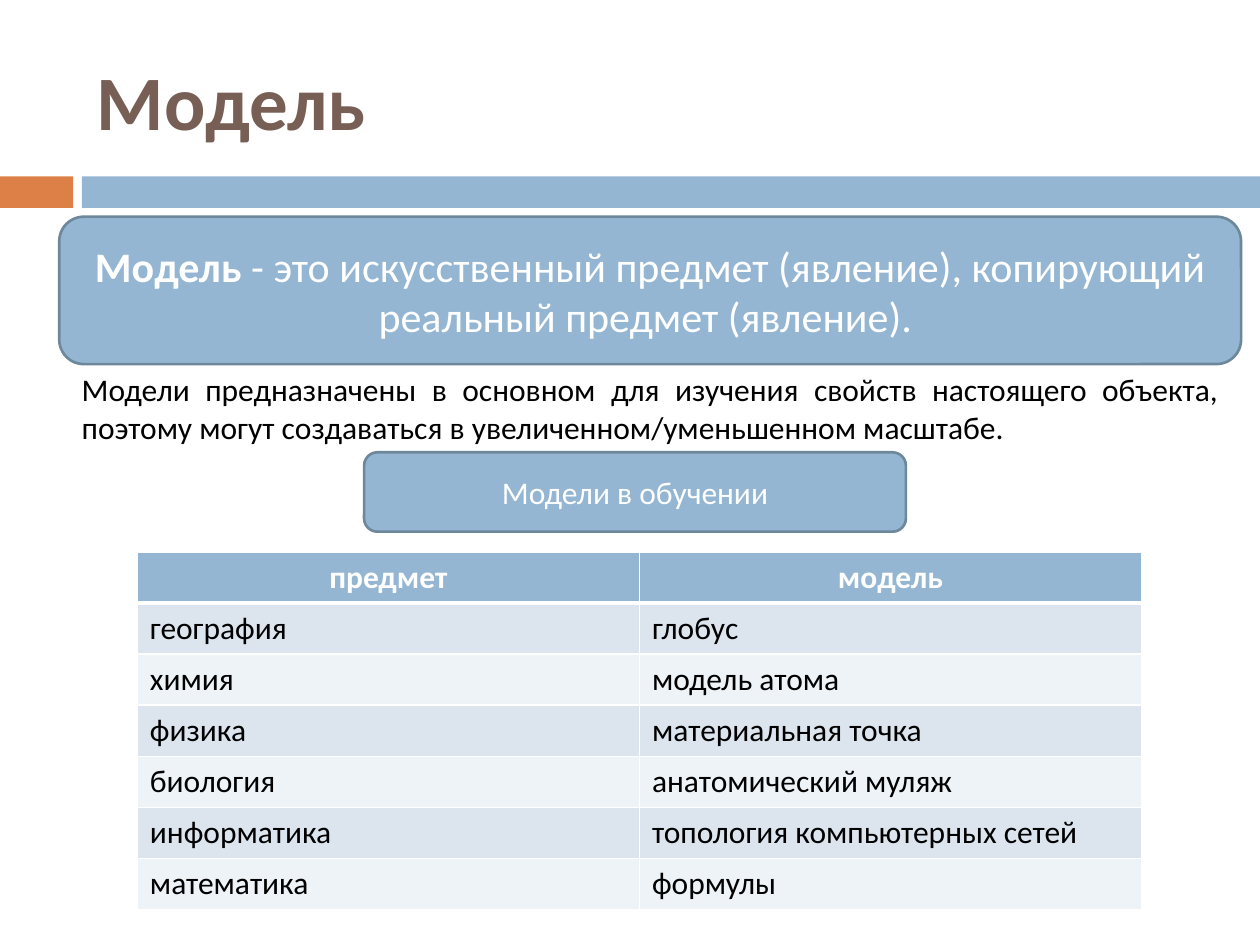
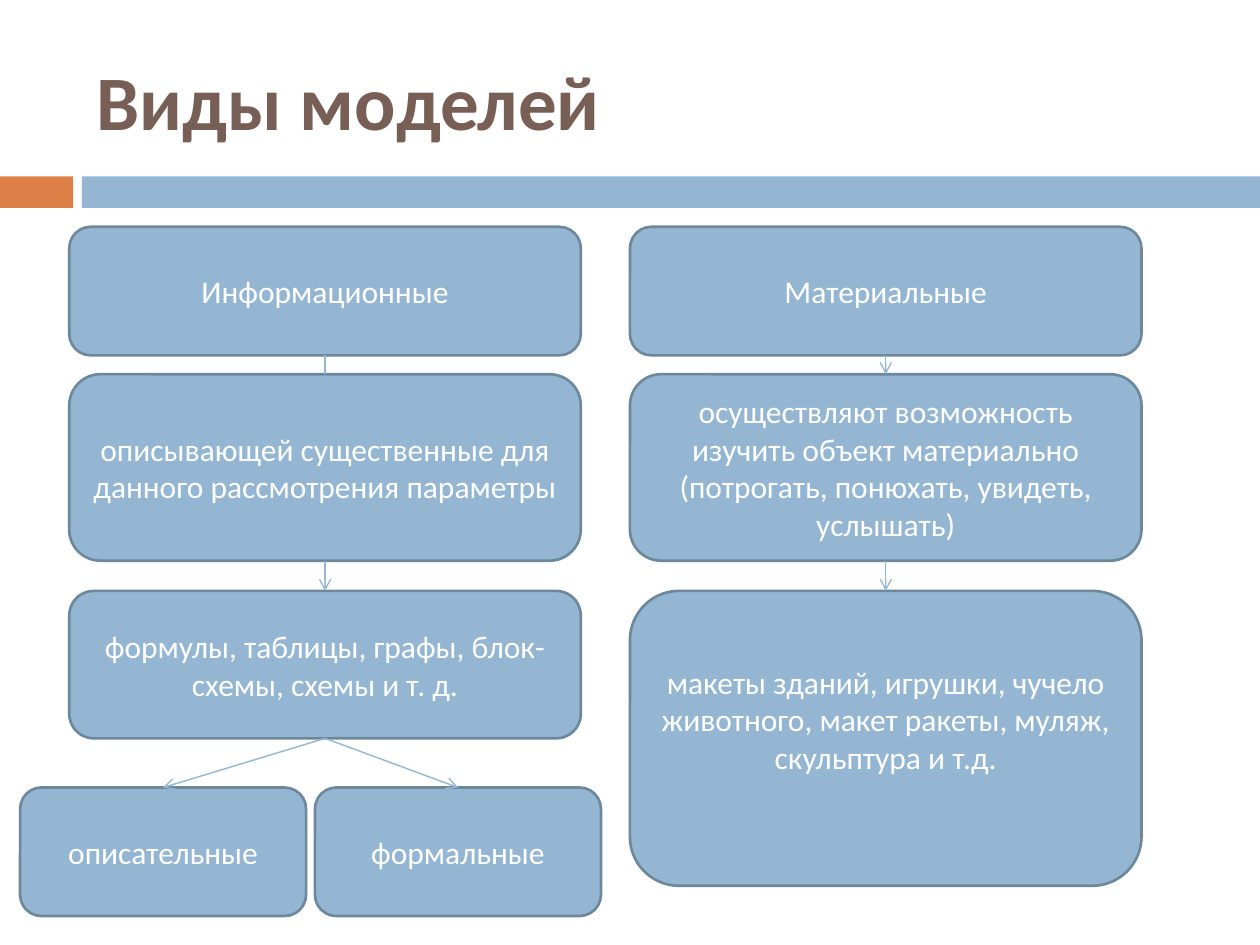
from itertools import pairwise

from lxml import etree
from pptx import Presentation
from pptx import util as u
from pptx.dml.color import RGBColor
from pptx.enum import shapes, text
from pptx.oxml.ns import qn

COLS, ROWS = 100, 75
BLUE, EDGE, RUST, BROWN = "94B6D2", "6D879B", "DD8047", "775F55"
WHITE, BLACK = "FFFFFF", "000000"
BANDS = ("DCE5EE", "EEF3F7")
FONT = "Calibri"
LEFT, MID, JUST = text.PP_ALIGN.LEFT, text.PP_ALIGN.CENTER, text.PP_ALIGN.JUSTIFY

deck = Presentation()
deck.slide_width, deck.slide_height = u.Inches(10), u.Inches(7.5)


def rgb(code):
    """Turn a hex string into a colour."""
    return RGBColor.from_string(code)


def across(cols):
    """Convert grid columns to a slide length."""
    return round(deck.slide_width * cols / COLS)


def down(rows):
    """Convert grid rows to a slide length."""
    return round(deck.slide_height * rows / ROWS)


def place(box):
    """Convert a grid box to left, top, width and height."""
    x, y, w, h = box
    return across(x), down(y), across(w), down(h)


def write(frame, words, size=18, color=WHITE, bold=False, lead="", align=MID,
          anchor=text.MSO_ANCHOR.MIDDLE):
    """Write one paragraph, with an optional bold lead."""
    frame.word_wrap = True
    frame.vertical_anchor = anchor
    para = frame.paragraphs[0]
    para.alignment = align
    for part, heavy in ((lead, True), (words, bold)):
        if part:
            run = para.add_run()
            run.text = part
            run.font.name, run.font.size, run.font.bold = FONT, u.Pt(size), heavy
            run.font.color.rgb = rgb(color)


def block(slide, box, kind, fill, edge=None):
    """Draw a flat filled shape."""
    shape = slide.shapes.add_shape(kind, *place(box))
    shape.shadow.inherit = False
    shape.fill.solid()
    shape.fill.fore_color.rgb = rgb(fill)
    if edge:
        shape.line.color.rgb = rgb(edge)
        shape.line.width = u.Pt(1.5)
    else:
        shape.line.fill.background()
    return shape


def card(slide, box, words, **style):
    """Draw a rounded card with centred text."""
    shape = block(slide, box, shapes.MSO_SHAPE.ROUNDED_RECTANGLE, BLUE, EDGE)
    write(shape.text_frame, words, **style)
    return shape


def label(slide, box, words, **style):
    """Place free text in a box."""
    write(slide.shapes.add_textbox(*place(box)).text_frame, words, **style)


def link(slide, start, end, arrow=True):
    """Join two grid points with a thin line."""
    line = slide.shapes.add_connector(
        shapes.MSO_CONNECTOR.STRAIGHT, across(start[0]), down(start[1]),
        across(end[0]), down(end[1]))
    line.line.color.rgb = rgb(BLUE)
    line.line.width = u.Pt(0.79)
    if arrow:
        etree.SubElement(line.line._get_or_add_ln(), qn("a:tailEnd"), type="arrow")
    etree.SubElement(line._element.spPr, qn("a:effectLst"))


def page(title):
    """Add a slide with its title and band."""
    slide = deck.slides.add_slide(deck.slide_layouts[6])
    rect = shapes.MSO_SHAPE.RECTANGLE
    block(slide, (0, 14, 5.8, 2.5), rect, RUST)
    block(slide, (6.5, 14, 93.5, 2.5), rect, BLUE)
    label(slide, (6.7, 2.5, 89.2, 10.8), title, size=44, color=BROWN, bold=True,
          align=LEFT)
    return slide


def border(cell, **sides):
    """Set white cell borders, given in points by side."""
    props = cell._tc.get_or_add_tcPr()
    for side, width in sides.items():
        line = etree.SubElement(props, qn(f"a:ln{side}"), w=str(u.Pt(width)))
        fill = etree.SubElement(line, qn("a:solidFill"))
        etree.SubElement(fill, qn("a:srgbClr"), val=WHITE)


def grid(slide, box, rows):
    """Fill a box with a banded table whose first row is the head."""
    table = slide.shapes.add_table(len(rows), len(rows[0]), *place(box)).table
    table.horz_banding = False
    for r, row in enumerate(rows):
        table.rows[r].height = down(box[3] / len(rows))
        head = r == 0
        for c, words in enumerate(row):
            cell = table.cell(r, c)
            border(cell, L=1, R=1, T=3 if r == 1 else 1, B=3 if head else 1)
            cell.fill.solid()
            cell.fill.fore_color.rgb = rgb(BLUE if head else BANDS[(r - 1) % 2])
            write(cell.text_frame, words, color=WHITE if head else BLACK, bold=head,
                  align=MID if head else LEFT, anchor=text.MSO_ANCHOR.TOP)


def chain(slide, box, steps, first=True):
    """Stack cards down a box, linked in turn; return the last card."""
    x, y, w, h = box
    tops = (0, 11.7, 28.9)
    ends = (10.2, 26.5, h)
    cards = [card(slide, (x, y + top, w, end - top), words)
             for top, end, words in zip(tops, ends, steps)]
    for i, (end, top) in enumerate(pairwise([v for s in zip(tops, ends) for v in s][1:-1])):
        if i % 2 == 0:
            link(slide, (x + w / 2, y + end), (x + w / 2, y + top), first or i > 0)
    return cards[-1]


def fork(slide, box, root, leaves, gap=0.7):
    """Split a root point into equal cards across a box."""
    x, y, w, h = box
    wide = (w - gap * (len(leaves) - 1)) / len(leaves)
    for i, words in enumerate(leaves):
        left = x + i * (wide + gap)
        card(slide, (left, y, wide, h), words)
        link(slide, root, (left + wide / 2, y))


def model():
    """Build the slide that defines a model."""
    slide = page("Модель")
    card(slide, (4.7, 17.2, 93.8, 11.7),
         " - это искусственный предмет (явление), копирующий реальный предмет (явление). ",
         size=24, lead="Модель")
    label(slide, (5.5, 28.9, 92.2, 7.1),
          "Модели предназначены в основном для изучения свойств настоящего объекта, "
          "поэтому могут создаваться в увеличенном/уменьшенном масштабе.",
          color=BLACK, align=JUST, anchor=text.MSO_ANCHOR.TOP)
    card(slide, (28.9, 35.9, 43, 6.3), "Модели в обучении")
    grid(slide, (10.9, 43.8, 79.7, 28.4), (
        ("предмет", "модель"),
        ("география", "глобус"),
        ("химия", "модель атома"),
        ("физика", "материальная точка"),
        ("биология", "анатомический муляж"),
        ("информатика", "топология компьютерных сетей"),
        ("математика", "формулы")))


def kinds():
    """Build the slide that sorts models by kind."""
    slide = page("Виды моделей")
    chain(slide, (5.5, 18, 40.6, 40.6), (
        "Информационные",
        "описывающей существенные для данного рассмотрения параметры",
        "формулы, таблицы, графы, блок-схемы, схемы и т. д."), first=False)
    fork(slide, (1.6, 62.5, 46.1, 10.2), (25.8, 58.6), ("описательные", "формальные"))
    last = chain(slide, (50, 18, 40.6, 52.3), (
        "Материальные",
        "осуществляют возможность изучить объект материально "
        "(потрогать, понюхать, увидеть, услышать)",
        "макеты зданий, игрушки, чучело животного, макет ракеты, муляж, скульптура и т.д."))
    last.text_frame.margin_bottom = down(3.5)


def main():
    """Build and save the deck."""
    model()
    kinds()
    deck.save("out.pptx")


if __name__ == "__main__":
    main()
